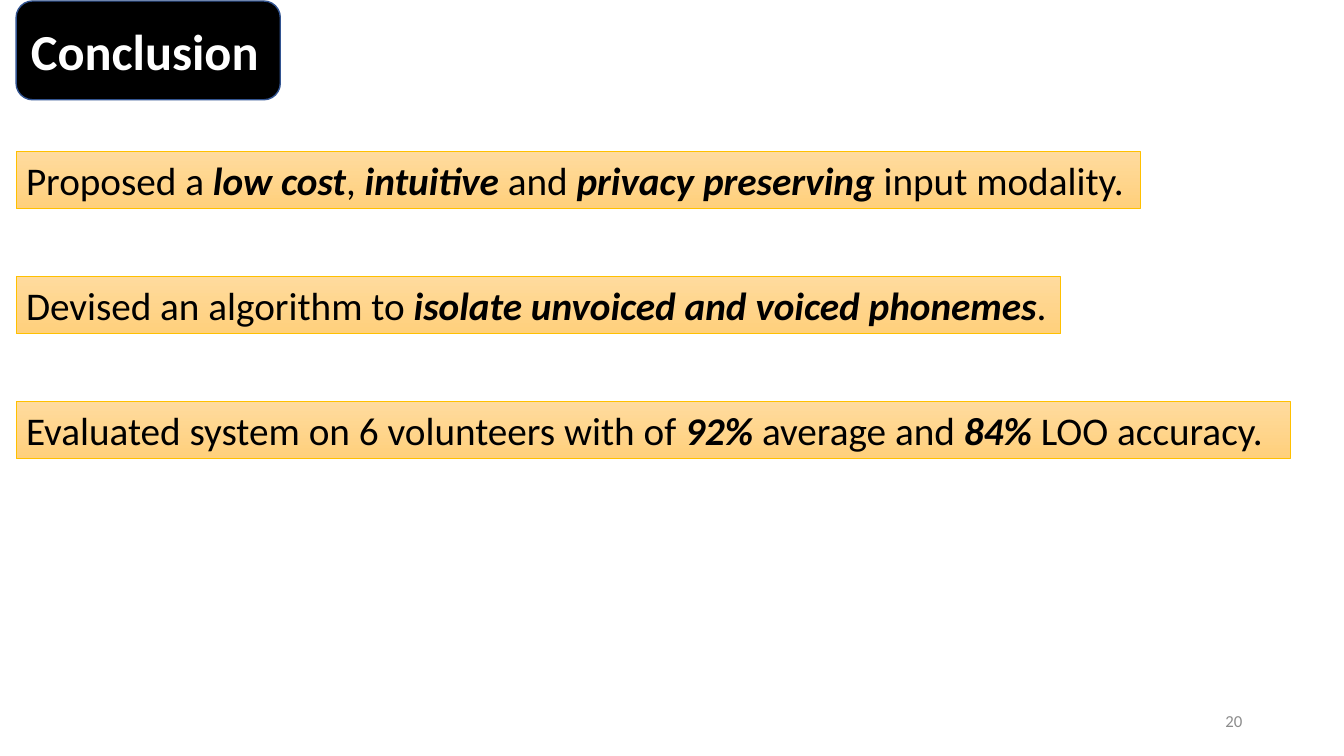
"""Build the conclusion slide: a title badge, three findings and the page number."""
import pptx
import pptx.dml.color
import pptx.enum.shapes
import pptx.enum.text
import pptx.util

RGBColor = pptx.dml.color.RGBColor
Inches = pptx.util.Inches
Pt = pptx.util.Pt
SHAPE = pptx.enum.shapes.MSO_SHAPE
ANCHOR = pptx.enum.text.MSO_ANCHOR
ALIGN = pptx.enum.text.PP_ALIGN

BLACK = RGBColor(0x00, 0x00, 0x00)
WHITE = RGBColor(0xFF, 0xFF, 0xFF)
NAVY = RGBColor(0x32, 0x54, 0x91)
GOLD = RGBColor(0xFF, 0xC0, 0x00)
PALE_ORANGE = RGBColor(0xFF, 0xDB, 0x9E)
ORANGE = RGBColor(0xFF, 0xD0, 0x7C)
GREY = RGBColor(0x8C, 0x8C, 0x8C)

LEFT = Inches(0.16)
FIRST_ROW = Inches(1.5)
ROW_STEP = Inches(1.24)
ROW_HEIGHT = Inches(0.57)

FINDINGS = [
    (11.15, ["Proposed a ", "low cost", ", ", "intuitive", " and ",
             "privacy preserving", " input modality."]),
    (10.36, ["Devised an algorithm to ",
             "isolate unvoiced and voiced phonemes", "."]),
    (12.64, ["Evaluated system on 6 volunteers with of ", "92%",
             " average and ", "84%", " LOO accuracy."]),
]


def style_run(run, size, color, bold=False, italic=False):
    run.font.name = "Calibri"
    run.font.size = Pt(size)
    run.font.color.rgb = color
    run.font.bold = bold
    run.font.italic = italic


def add_box(preset, top, width, height, line_color, line_width):
    box = slide.shapes.add_shape(preset, LEFT, top, width, height)
    box.shadow.inherit = False
    box.line.color.rgb = line_color
    box.line.width = Pt(line_width)
    box.text_frame.word_wrap = True
    box.text_frame.paragraphs[0].alignment = ALIGN.LEFT
    return box


deck = pptx.Presentation()
deck.slide_width = Inches(13.33)
deck.slide_height = Inches(7.5)
slide = deck.slides.add_slide(deck.slide_layouts[6])

page_number = slide.shapes.add_textbox(
    Inches(9.42), Inches(6.95), Inches(3), Inches(0.4)).text_frame
page_number.word_wrap = True
page_number.vertical_anchor = ANCHOR.MIDDLE
page_number.text = "20"
page_number.paragraphs[0].alignment = ALIGN.RIGHT
style_run(page_number.paragraphs[0].runs[0], 12, GREY)

title = add_box(SHAPE.ROUNDED_RECTANGLE, Inches(0.01), Inches(2.62),
                Inches(0.98), NAVY, 1)
title.fill.solid()
title.fill.fore_color.rgb = BLACK
title.text_frame.vertical_anchor = ANCHOR.MIDDLE
title.text_frame.text = "Conclusion"
style_run(title.text_frame.paragraphs[0].runs[0], 36, WHITE, bold=True)

for row, (width, phrases) in enumerate(FINDINGS):
    finding = add_box(SHAPE.RECTANGLE, FIRST_ROW + row * ROW_STEP,
                      Inches(width), ROW_HEIGHT, GOLD, 0.5)
    finding.fill.gradient()
    finding.fill.gradient_angle = 270
    for stop, color in zip(finding.fill.gradient_stops, (PALE_ORANGE, ORANGE)):
        stop.color.rgb = color
    finding.text_frame.vertical_anchor = ANCHOR.TOP
    finding.text_frame.auto_size = pptx.enum.text.MSO_AUTO_SIZE.SHAPE_TO_FIT_TEXT
    for position, phrase in enumerate(phrases):
        run = finding.text_frame.paragraphs[0].add_run()
        run.text = phrase
        emphasized = position % 2 == 1
        style_run(run, 28, BLACK, bold=emphasized, italic=emphasized)

deck.save("out.pptx")
